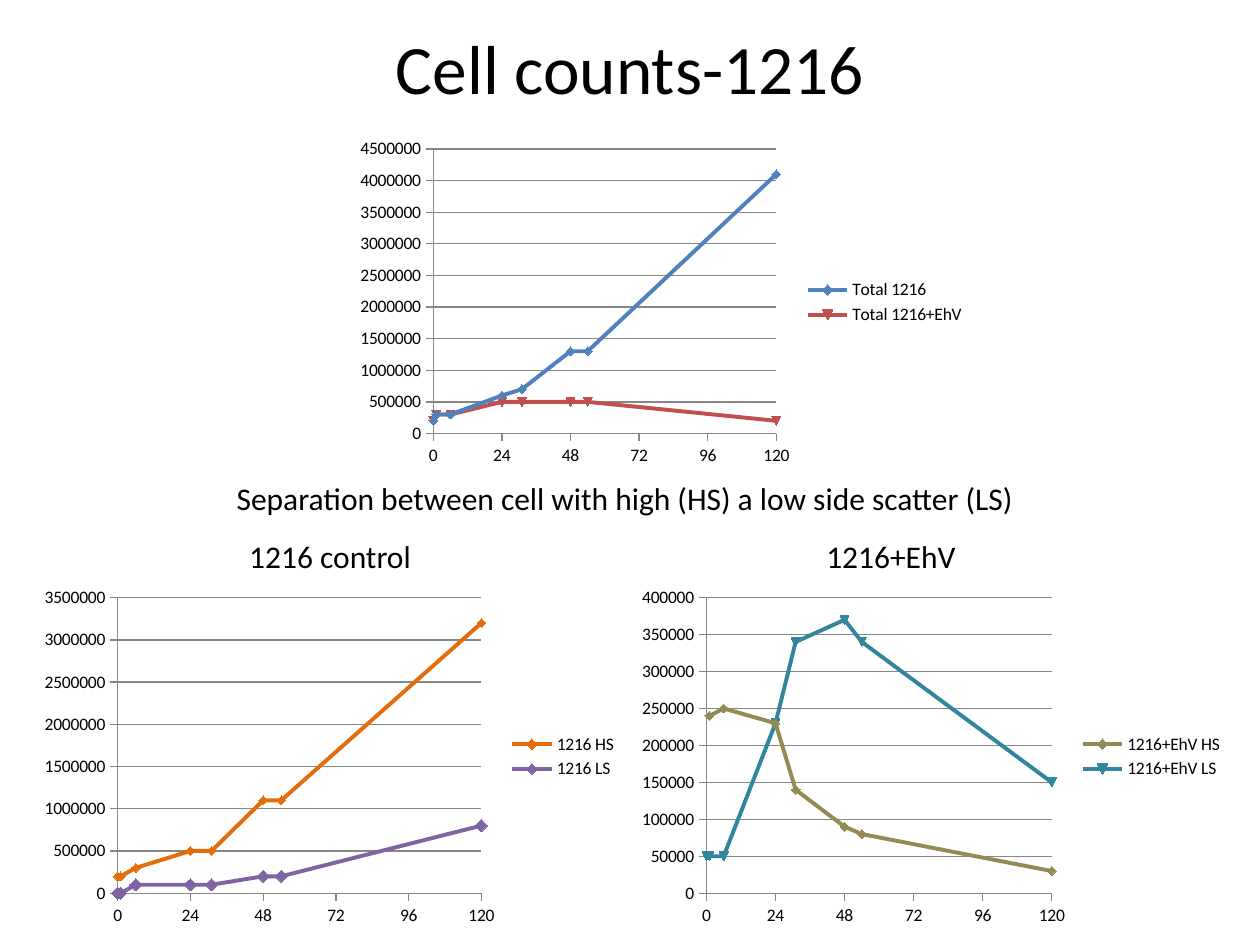
from dataclasses import dataclass

from pptx import Presentation
from pptx.chart.data import XyChartData
from pptx.dml.color import RGBColor
from pptx.enum.chart import XL_CHART_TYPE as ChartType
from pptx.enum.chart import XL_LEGEND_POSITION as LegendPos
from pptx.enum.chart import XL_MARKER_STYLE as Marker
from pptx.enum.chart import XL_TICK_MARK as Tick
from pptx.enum.text import MSO_ANCHOR, PP_ALIGN
from pptx.util import Inches, Pt

FONT = "Calibri"
COLORS = {
    "text": "000000",
    "grid": "868686",
    "blue": "4F81BD",
    "red": "C0504D",
    "orange": "E46C0A",
    "purple": "8064A2",
    "olive": "948A54",
    "teal": "31859C",
}
WIDTH, HEIGHT = 10, 7.5
HOURS = (0, 1, 6, 24, 31, 48, 54, 120)
LOWER_TOP, LOWER_HEIGHT = 4.61, 2.79
CAPTION_HEIGHT = 0.4


@dataclass
class Box:
    left: float
    top: float
    width: float
    height: float

    def emu(self) -> tuple:
        return tuple(Inches(v) for v in (self.left, self.top, self.width, self.height))


@dataclass
class Series:
    name: str
    color: str
    counts: tuple  # thousands of cells; None where nothing was measured
    marker: Marker = Marker.AUTOMATIC
    marker_size: int = 5


@dataclass
class Plot:
    box: Box
    y_max: int
    y_step: int
    series: tuple


@dataclass
class Label:
    text: str
    box: Box
    size: float = 18
    wrap: bool = False
    align: PP_ALIGN = PP_ALIGN.LEFT


PLOTS = (
    Plot(Box(2.76, 1.05, WIDTH / 2, 2.7), 4500000, 500000, (
        Series("Total 1216", "blue", (200, 300, 300, 600, 700, 1300, 1300, 4100)),
        Series("Total 1216+EhV", "red", (200, 300, 300, 500, 500, 500, 500, 200)),
    )),
    Plot(Box(0.26, LOWER_TOP, WIDTH / 2 - 0.26, LOWER_HEIGHT), 3500000, 500000, (
        Series("1216 HS", "orange", (200, 200, 300, 500, 500, 1100, 1100, 3200)),
        Series("1216 LS", "purple", (0, 0, 100, 100, 100, 200, 200, 800),
               Marker.DIAMOND, 7),
    )),
    Plot(Box(WIDTH / 2, LOWER_TOP, 4.81, LOWER_HEIGHT), 400000, 50000, (
        Series("1216+EhV HS", "olive", (None, 240, 250, 230, 140, 90, 80, 30)),
        Series("1216+EhV LS", "teal", (50, 50, 50, 230, 340, 370, 340, 150)),
    )),
)

LABELS = (
    Label("Cell counts-1216", Box(0.5, 0.3, WIDTH - 1, 0.46), 39.6, True,
          PP_ALIGN.CENTER),
    Label("Separation between cell with high (HS) a low side scatter (LS)",
          Box(1.78, 3.75, 6.43, CAPTION_HEIGHT)),
    Label("1216 control", Box(1.88, 4.21, 1.5, CAPTION_HEIGHT)),
    Label("1216+EhV", Box(6.46, 4.21, 1.24, CAPTION_HEIGHT)),
)


def rgb(name: str) -> RGBColor:
    return RGBColor.from_string(COLORS[name])


def add_label(slide, label: Label) -> None:
    tf = slide.shapes.add_textbox(*label.box.emu()).text_frame
    tf.word_wrap = label.wrap
    tf.vertical_anchor = MSO_ANCHOR.MIDDLE
    p = tf.paragraphs[0]
    p.alignment = label.align
    r = p.add_run()
    r.text = label.text
    r.font.name = FONT
    r.font.size = Pt(label.size)
    r.font.color.rgb = rgb("text")


def style_axis(axis, maximum: int, step: int, grid: bool) -> None:
    axis.minimum_scale, axis.maximum_scale, axis.major_unit = 0, maximum, step
    axis.major_tick_mark, axis.minor_tick_mark = Tick.OUTSIDE, Tick.NONE
    axis.has_major_gridlines = grid
    lines = [axis.format.line]
    if grid:
        lines.append(axis.major_gridlines.format.line)
    for line in lines:
        line.color.rgb = rgb("grid")
        line.width = Pt(0.75)


def style_series(drawn, series: Series) -> None:
    color = rgb(series.color)
    drawn.smooth = False
    drawn.format.line.color.rgb = color
    drawn.format.line.width = Pt(2.25)
    marker = drawn.marker
    marker.style, marker.size = series.marker, series.marker_size
    marker.format.fill.solid()
    marker.format.fill.fore_color.rgb = color
    marker.format.line.color.rgb = color


def drop_missing_points(chart) -> None:
    """Leave a gap, not the word None, where a count is missing."""
    for point in chart.element.xpath(".//c:yVal//c:pt[c:v='None']"):
        point.getparent().remove(point)


def add_plot(slide, plot: Plot) -> None:
    data = XyChartData()
    for series in plot.series:
        points = data.add_series(series.name)
        for hour, count in zip(HOURS, series.counts):
            points.add_data_point(hour, None if count is None else count * 1000)
    chart = slide.shapes.add_chart(
        ChartType.XY_SCATTER_LINES, *plot.box.emu(), data).chart
    drop_missing_points(chart)
    chart.has_title = False
    chart.font.name = FONT
    chart.font.size = Pt(10)
    chart.font.color.rgb = rgb("text")
    chart.has_legend = True
    chart.legend.position = LegendPos.RIGHT
    chart.legend.include_in_layout = False
    chart.plots[0].vary_by_categories = False
    style_axis(chart.category_axis, HOURS[-1], 24, False)
    style_axis(chart.value_axis, plot.y_max, plot.y_step, True)
    for drawn, series in zip(chart.plots[0].series, plot.series):
        style_series(drawn, series)


def main() -> None:
    prs = Presentation()
    prs.slide_width, prs.slide_height = Inches(WIDTH), Inches(HEIGHT)
    slide = prs.slides.add_slide(prs.slide_layouts[6])
    for plot in PLOTS:
        add_plot(slide, plot)
    for label in LABELS:
        add_label(slide, label)
    prs.save("out.pptx")


if __name__ == "__main__":
    main()
